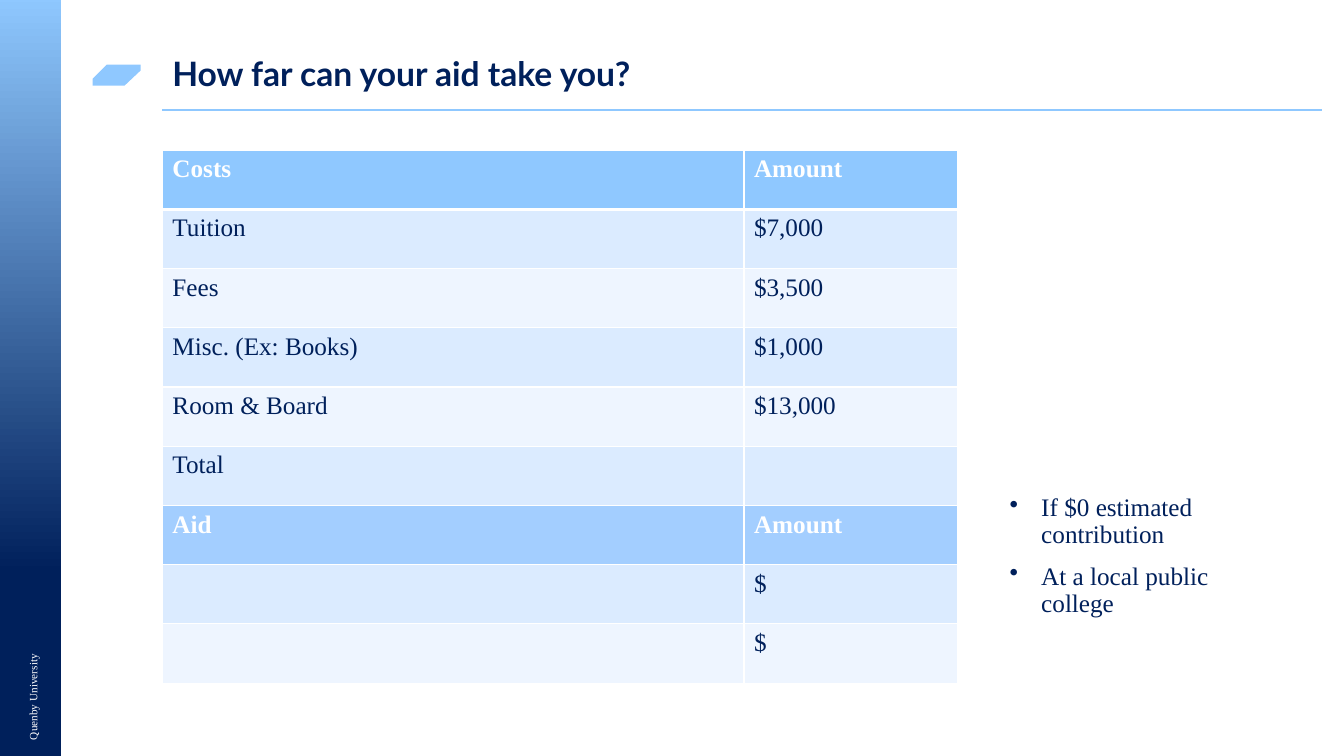
from lxml.etree import SubElement
from pptx import Presentation
from pptx.dml.color import RGBColor
from pptx.enum.shapes import MSO_CONNECTOR as CONN, MSO_SHAPE as SHAPE
from pptx.enum.text import MSO_ANCHOR as ANCHOR
from pptx.oxml import parse_xml
from pptx.oxml.ns import nsdecls, qn
from pptx.util import Pt

COLORS = {
    "navy": "00205B", "sky": "8FC8FF", "aid": "A3CEFF",
    "band": "DBEBFF", "pale": "EEF5FF", "white": "FFFFFF",
}


def rgb(name):
    return RGBColor.from_string(COLORS[name])


class Deck:
    body_font, title_font = "Times New Roman", "Lato"

    def __init__(self, prs):
        self.s = prs.slides.add_slide(prs.slide_layouts[6])

    def style(self, p, size=18, color="navy", bold=False, font=None):
        f = p.font
        f.name, f.size, f.bold = font or self.body_font, Pt(size), bold
        f.color.rgb = rgb(color)

    def gradient_bar(self, x, y, w, h, stops):
        sp = self.s.shapes.add_shape(SHAPE.RECTANGLE, Pt(x), Pt(y), Pt(w), Pt(h))
        sp.shadow.inherit = False
        sp.line.fill.background()
        sp.fill.gradient()
        sp.fill.gradient_angle = 270
        for stop, (pos, color) in zip(sp.fill.gradient_stops, stops):
            stop.position = pos
            stop.color.rgb = rgb(color)

    def polygon(self, points, color):
        pts = [(Pt(x), Pt(y)) for x, y in points]
        builder = self.s.shapes.build_freeform(*pts[0])
        builder.add_line_segments(pts[1:], close=True)
        sp = builder.convert_to_shape()
        sp.shadow.inherit = False
        sp.fill.solid()
        sp.fill.fore_color.rgb = rgb(color)
        sp.line.fill.background()

    def rule(self, x1, x2, y, color):
        line = self.s.shapes.add_connector(CONN.STRAIGHT, Pt(x1), Pt(y), Pt(x2), Pt(y))
        line.line.color.rgb = rgb(color)
        line.line.width = Pt(1)
        SubElement(line._element.spPr, qn("a:effectLst"))

    def text(self, x, y, w, h, lines, anchor=ANCHOR.TOP, rotation=0,
             spacing=None, bullets=False, **style):
        sp = self.s.shapes.add_textbox(Pt(x), Pt(y), Pt(w), Pt(h))
        sp.rotation = rotation
        tf = sp.text_frame
        tf.word_wrap = True
        tf.vertical_anchor = anchor
        tf.text = "\n".join(lines)
        for p in tf.paragraphs:
            self.style(p, **style)
            p.line_spacing = spacing
            if bullets:
                p.space_before = Pt(10)
                pPr = p._p.get_or_add_pPr()
                pPr.set("marL", str(Pt(22.5)))
                pPr.set("indent", str(-Pt(22.5)))
                # the bullet goes ahead of the default run properties
                pPr.find(qn("a:defRPr")).addprevious(
                    parse_xml(f'<a:buChar {nsdecls("a")} char="•"/>'))

    def borders(self, cell, **widths):
        tcPr = cell._tc.get_or_add_tcPr()
        for i, side in enumerate("LRTB"):
            tcPr.insert(i, parse_xml(
                f'<a:ln{side} {nsdecls("a")} w="{Pt(widths.get(side, 1))}"><a:solidFill>'
                f'<a:srgbClr val="{COLORS["white"]}"/></a:solidFill></a:ln{side}>'))

    def table(self, x, y, col_widths, row_height, rows):
        frame = self.s.shapes.add_table(
            len(rows), len(col_widths), Pt(x), Pt(y),
            Pt(sum(col_widths)), Pt(row_height * len(rows)))
        tbl = frame.table
        for col, w in zip(tbl.columns, col_widths):
            col.width = Pt(w)
        for i, (fill, *values) in enumerate(rows):
            tbl.rows[i].height = Pt(row_height)
            header = fill in ("sky", "aid")
            for cell, value in zip(tbl.rows[i].cells, values):
                cell.text = value
                self.style(cell.text_frame.paragraphs[0],
                           color="white" if header else "navy", bold=header)
                cell.fill.solid()
                cell.fill.fore_color.rgb = rgb(fill)
                self.borders(cell, T=3 if i == 1 else 1, B=3 if i == 0 else 1)


def main():
    prs = Presentation()
    prs.slide_width, prs.slide_height = Pt(960), Pt(540)
    d = Deck(prs)

    # Side bar with the school name
    d.gradient_bar(-9.4, -3.6, 53.3, 558, [(0, "sky"), (0.74, "navy")])
    d.text(-98.6, 404.6, 244.8, 17.3, ["Quenby University"],
           rotation=270, size=8, color="white")

    # Title with its marker and rule
    d.polygon([(100.4, 46.1), (100.4, 50.4), (88.9, 61.2),
               (66.2, 61.2), (66.2, 56.2), (76.3, 46.1)], "sky")
    d.rule(116, 944, 78.5, "sky")
    d.text(116, 28.8, 828, 49.7, ["How far can your aid take you?"],
           anchor=ANCHOR.MIDDLE, spacing=0.9, size=24, bold=True, font=d.title_font)

    # Costs and aid
    d.table(116, 107.3, [415.4, 152.6], 42.3, [
        ("sky", "Costs", "Amount"),
        ("band", "Tuition", "$7,000"),
        ("pale", "Fees", "$3,500"),
        ("band", "Misc. (Ex: Books)", "$1,000"),
        ("pale", "Room & Board", "$13,000"),
        ("band", "Total", ""),
        ("aid", "Aid", "Amount"),
        ("band", "", "$"),
        ("pale", "", "$"),
    ])

    # Assumptions
    d.text(714.2, 350, 167.8, 110,
           ["If $0 estimated contribution", "At a local public college"],
           spacing=0.9, bullets=True)

    prs.save("out.pptx")


if __name__ == "__main__":
    main()
